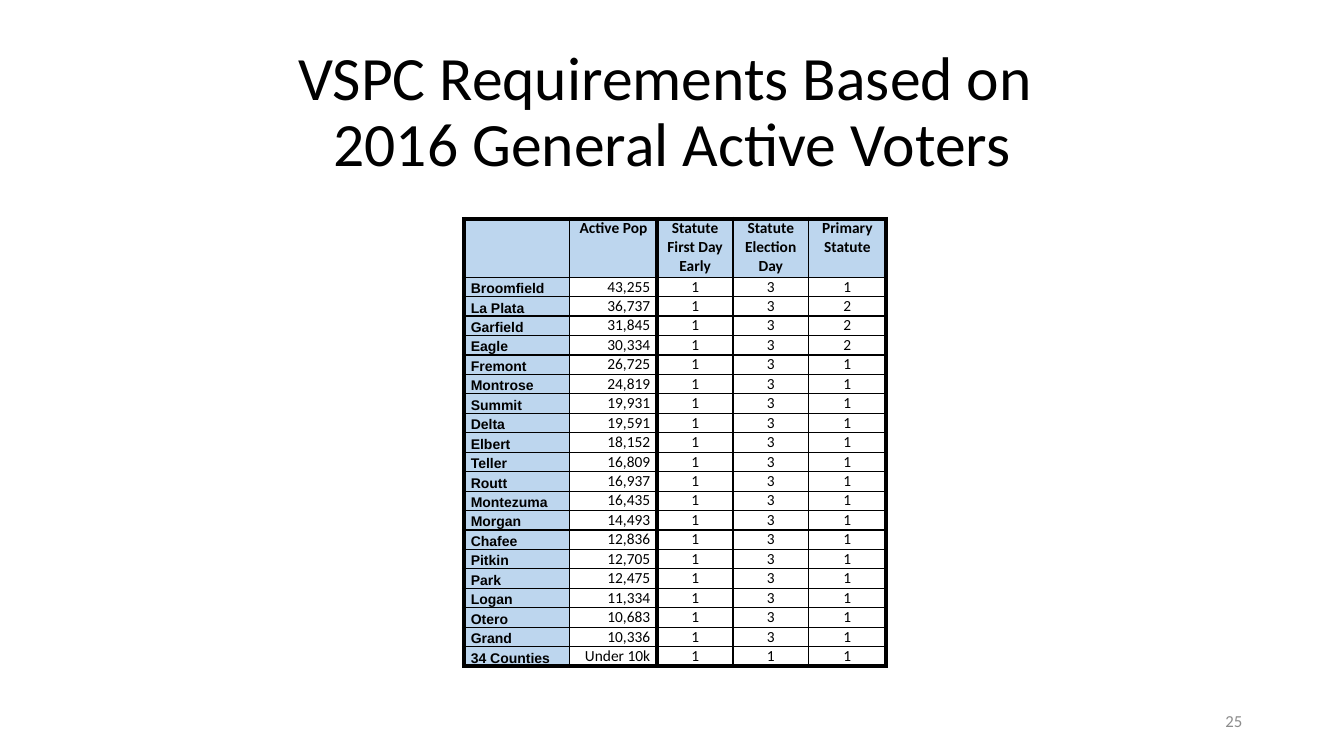
from lxml import etree
from pptx import Presentation
from pptx import util as u
from pptx.dml.color import RGBColor
from pptx.enum import text
from pptx.oxml import ns

BLACK, GREY, BLUE = "000000", "8C8C8C", "BDD6EE"
LEFT, CENTER, RIGHT = text.PP_ALIGN.LEFT, text.PP_ALIGN.CENTER, text.PP_ALIGN.RIGHT
TOP, MIDDLE, BOTTOM = (text.MSO_ANCHOR.TOP, text.MSO_ANCHOR.MIDDLE,
                       text.MSO_ANCHOR.BOTTOM)

HEADINGS = ["", "Active Pop", "Statute First Day Early",
            "Statute Election Day", "Primary Statute"]
# County, active voters, first day of early voting, election day, primary
COUNTIES = [
    ("Broomfield", "43,255", 1, 3, 1),
    ("La Plata", "36,737", 1, 3, 2),
    ("Garfield", "31,845", 1, 3, 2),
    ("Eagle", "30,334", 1, 3, 2),
    ("Fremont", "26,725", 1, 3, 1),
    ("Montrose", "24,819", 1, 3, 1),
    ("Summit", "19,931", 1, 3, 1),
    ("Delta", "19,591", 1, 3, 1),
    ("Elbert", "18,152", 1, 3, 1),
    ("Teller", "16,809", 1, 3, 1),
    ("Routt", "16,937", 1, 3, 1),
    ("Montezuma", "16,435", 1, 3, 1),
    ("Morgan", "14,493", 1, 3, 1),
    ("Chafee", "12,836", 1, 3, 1),
    ("Pitkin", "12,705", 1, 3, 1),
    ("Park", "12,475", 1, 3, 1),
    ("Logan", "11,334", 1, 3, 1),
    ("Otero", "10,683", 1, 3, 1),
    ("Grand", "10,336", 1, 3, 1),
    ("34 Counties", "Under 10k", 1, 1, 1),
]
COLUMN_WIDTHS = [1.05, 0.87, 0.75, 0.75, 0.77]
HEADER_HEIGHT, TABLE_HEIGHT = 0.58, 4.44
THIN, THICK = 1, 3


def color(value):
    return RGBColor.from_string(value)


def format_paragraph(paragraph, size, align, font="Calibri", fill=BLACK, bold=False):
    paragraph.alignment = align
    for run in paragraph.runs:
        run.font.size = u.Pt(size)
        run.font.name = font
        run.font.bold = bold
        run.font.color.rgb = color(fill)


def add_label(slide, box, words, size, align, fill=BLACK, spacing=None):
    frame = slide.shapes.add_textbox(*map(u.Inches, box)).text_frame
    frame.word_wrap = True
    frame.vertical_anchor = MIDDLE
    frame.text = words
    paragraph = frame.paragraphs[0]
    paragraph.line_spacing = spacing
    format_paragraph(paragraph, size, align, fill=fill)


def set_borders(cell, **widths):
    properties = cell._tc.get_or_add_tcPr()
    for side in "LRTB":
        line = etree.SubElement(properties, ns.qn(f"a:ln{side}"),
                                w=str(u.Pt(widths[side])))
        solid = etree.SubElement(line, ns.qn("a:solidFill"))
        etree.SubElement(solid, ns.qn("a:srgbClr"), val=BLACK)


def format_cell(cell, row, column, last_row):
    header, county = row == 0, column == 0
    cell.margin_left = cell.margin_right = u.Inches(0.07)
    cell.margin_top = cell.margin_bottom = 0

    # Thick lines frame the table and set off the county and voter columns
    set_borders(cell,
                L=THICK if column in (0, 2) else THIN,
                R=THICK if column in (1, 4) else THIN,
                T=THICK if header else THIN,
                B=THICK if row == last_row else THIN)
    if header or county:
        cell.fill.solid()
        cell.fill.fore_color.rgb = color(BLUE)
    else:
        cell.fill.background()

    paragraph = cell.text_frame.paragraphs[0]
    cell.vertical_anchor = BOTTOM if county and not header else TOP
    if header:
        format_paragraph(paragraph, 11, CENTER, bold=True)
    elif county:
        format_paragraph(paragraph, 10, LEFT, font="Arial", bold=True)
    else:
        format_paragraph(paragraph, 11, RIGHT if column == 1 else CENTER)


def add_requirements(slide):
    rows = [HEADINGS, *COUNTIES]
    table = slide.shapes.add_table(
        len(rows), len(HEADINGS), u.Inches(4.6), u.Inches(2.17),
        u.Inches(sum(COLUMN_WIDTHS)), u.Inches(TABLE_HEIGHT)).table
    table.first_row = table.horz_banding = False
    for column, width in zip(table.columns, COLUMN_WIDTHS):
        column.width = u.Inches(width)
    county_height = (TABLE_HEIGHT - HEADER_HEIGHT) / len(COUNTIES)
    for r, values in enumerate(rows):
        table.rows[r].height = u.Inches(county_height if r else HEADER_HEIGHT)
        for c, value in enumerate(values):
            cell = table.cell(r, c)
            cell.text_frame.text = str(value)
            format_cell(cell, r, c, len(COUNTIES))


def main():
    deck = Presentation()
    deck.slide_width, deck.slide_height = u.Inches(13.33), u.Inches(7.5)
    slide = deck.slides.add_slide(deck.slide_layouts[6])

    # Title
    add_label(slide, (0.92, 0.4, 11.5, 1.45),
              "VSPC Requirements Based on \v2016 General Active Voters",
              44, CENTER, spacing=0.9)
    # County table
    add_requirements(slide)
    # Slide number
    add_label(slide, (9.42, 6.95, 3, 0.4), "25", 12, RIGHT, fill=GREY)

    deck.save("out.pptx")


if __name__ == "__main__":
    main()
